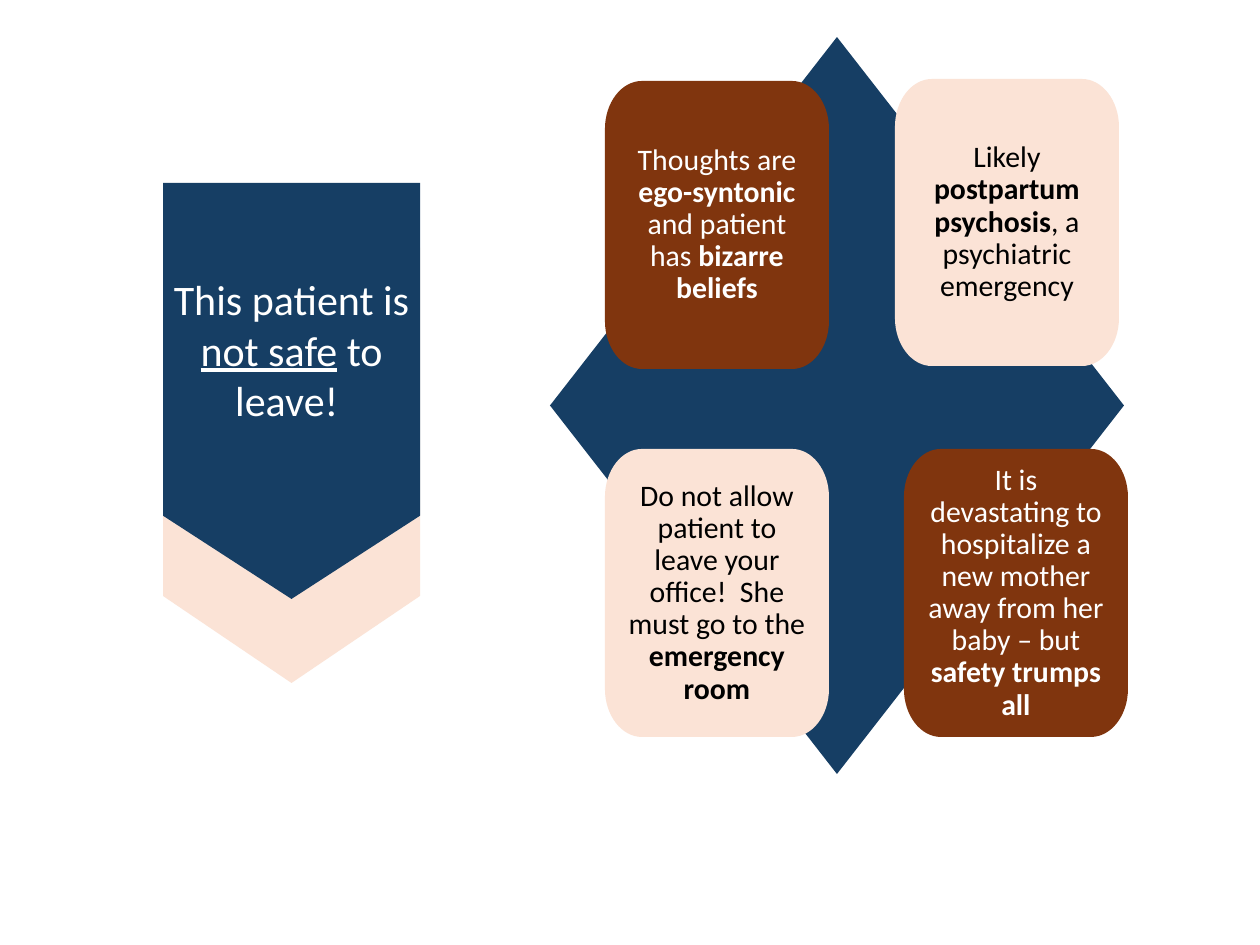
from pptx import Presentation
from pptx.dml.color import RGBColor
from pptx.enum.shapes import MSO_SHAPE
from pptx.enum.text import MSO_ANCHOR, PP_ALIGN
from pptx.oxml import parse_xml
from pptx.oxml.ns import nsdecls
from pptx.util import Pt

PX = 914400 / 126
COLORS = {"navy": "163E64", "peach": "FBE3D6", "brown": "80350E",
          "white": "FFFFFF", "black": "000000"}

# Text runs: (text, emphasis), where emphasis is "", "bold" or "underline"
VERDICT = [("This patient is ", ""), ("not safe", "underline"), (" to leave! ", "")]

# Cards: left, top, height, fill, font colour, runs
CARDS = [
    (605, 81, 288, "brown", "white",
     [("Thoughts are ", ""), ("ego-syntonic", "bold"),
      (" and patient has ", ""), ("bizarre beliefs", "bold")]),
    (895, 79, 287, "peach", "black",
     [("Likely ", ""), ("postpartum psychosis", "bold"),
      (", a psychiatric emergency", "")]),
    (605, 449, 288, "peach", "black",
     [("Do not allow patient to leave your office!  She must go to the ", ""),
      ("emergency room", "bold")]),
    (904, 449, 288, "brown", "white",
     [("It is devastating to hospitalize a new mother away from her baby – but ", ""),
      ("safety trumps all", "bold")]),
]
CARD_W = 224
CORNER_RX, CORNER_RY = 37, 48
HANDLE = 0.55  # Bezier handle length of a quarter ellipse


def emu(px):
    return round(px * PX)


def rgb(name):
    return RGBColor.from_string(COLORS[name])


def paint(s, fill):
    s.shadow.inherit = False
    s.fill.solid()
    s.fill.fore_color.rgb = rgb(fill)
    s.line.fill.background()


def add_preset(shapes, kind, box, fill):
    s = shapes.add_shape(kind, *map(emu, box))
    paint(s, fill)
    return s


def corner_points(x, y, dx, dy, upright):
    """Start, two handles and end of the curve round corner (x, y).

    dx and dy point into the card; upright corners start on a vertical side.
    """
    rx, ry, rest = dx * CORNER_RX, dy * CORNER_RY, 1 - HANDLE
    points = [(x, y + ry), (x, y + ry * rest), (x + rx * rest, y), (x + rx, y)]
    return points if upright else points[::-1]


def add_card(shapes, left, top, height, fill):
    """Draw a rectangle whose corners are quarter ellipses."""
    right, bottom = left + CARD_W, top + height
    corners = [(left, top, 1, 1, True), (right, top, -1, 1, False),
               (right, bottom, -1, -1, True), (left, bottom, 1, -1, False)]
    points = [(emu(x), emu(y)) for c in corners for x, y in corner_points(*c)]
    builder = shapes.build_freeform(*points[0])
    builder.add_line_segments(points[1:] + points[:1], close=True)
    s = builder.convert_to_shape()

    # Of every four segments, the first three become one curve
    segments = s._element.xpath(".//a:lnTo")
    for i in range(0, len(segments), 4):
        curve = parse_xml(f"<a:cubicBezTo {nsdecls('a')}/>")
        segments[i].addprevious(curve)
        for segment in segments[i:i + 3]:
            curve.append(segment[0])
            segment.getparent().remove(segment)
    paint(s, fill)
    return s


def write(s, runs, size, color, inset_x, inset_y, spacing=None):
    tf = s.text_frame
    tf.word_wrap = True
    tf.vertical_anchor = MSO_ANCHOR.MIDDLE
    tf.margin_left = tf.margin_right = emu(inset_x)
    tf.margin_top = tf.margin_bottom = emu(inset_y)
    p = tf.paragraphs[0]
    p.alignment = PP_ALIGN.CENTER
    p.line_spacing = spacing
    p.font.name, p.font.size = "Calibri", Pt(size)
    p.font.color.rgb = rgb(color)
    for text, emphasis in runs:
        r = p.add_run()
        r.text = text
        if emphasis:
            setattr(r.font, emphasis, True)


def main():
    prs = Presentation()
    prs.slide_width, prs.slide_height = emu(1260), emu(945)
    shapes = prs.slides.add_slide(prs.slide_layouts[6]).shapes

    pointer = MSO_SHAPE.FLOWCHART_OFFPAGE_CONNECTOR
    add_preset(shapes, pointer, (163, 248, 257, 435), "peach")
    verdict = add_preset(shapes, pointer, (163, 183, 257, 416), "navy")
    write(verdict, VERDICT, 24, "white", 9, 5)

    add_preset(shapes, MSO_SHAPE.DIAMOND, (550, 37, 574, 737), "navy")
    for left, top, height, fill, color, runs in CARDS:
        card = add_card(shapes, left, top, height, fill)
        write(card, runs, 17, color, 21, 21, 0.9)

    prs.save("out.pptx")


if __name__ == "__main__":
    main()
